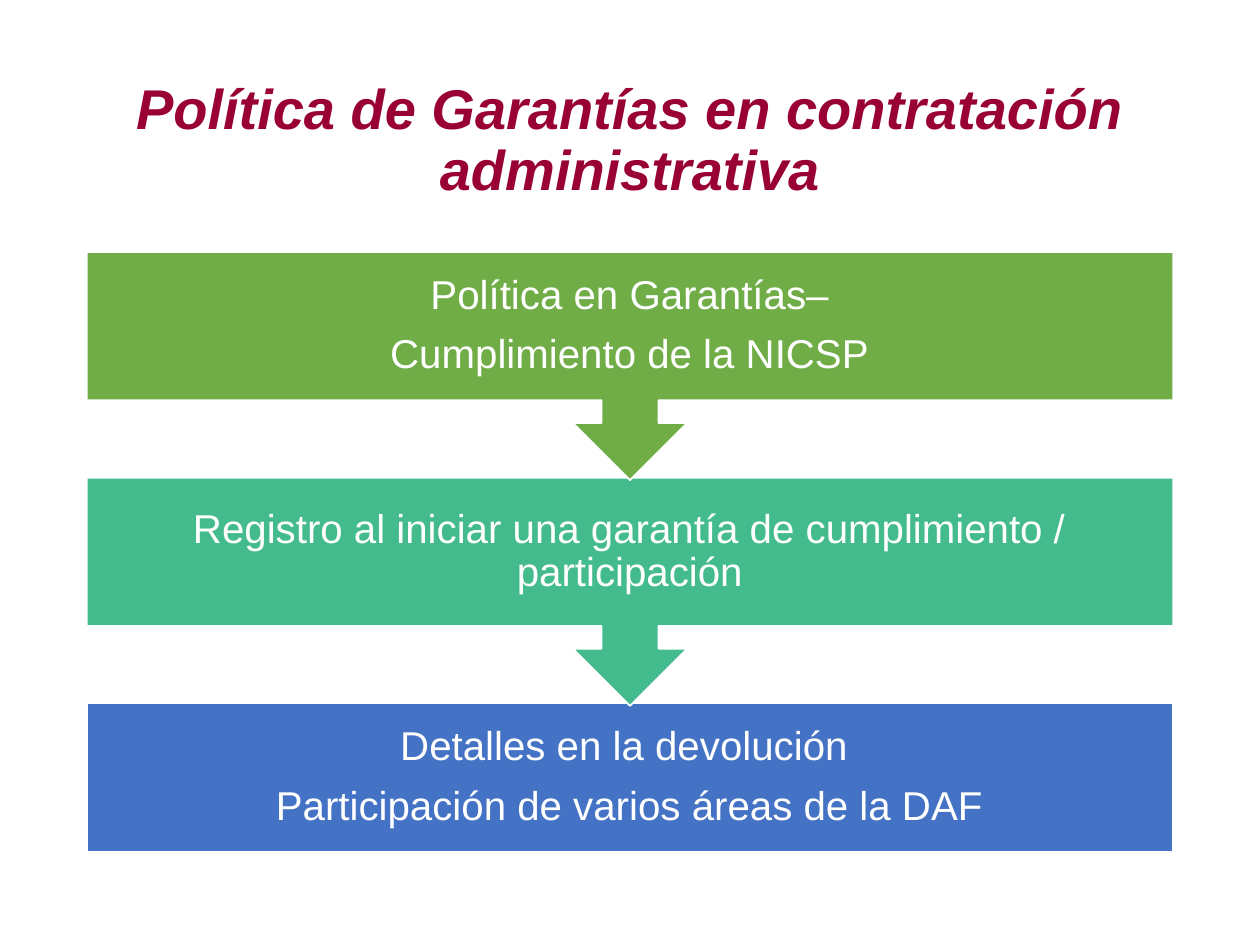
from pptx import Presentation
from pptx.dml.color import RGBColor
from pptx.enum.shapes import MSO_SHAPE
from pptx.enum.text import MSO_ANCHOR, PP_ALIGN
from pptx.util import Cm, Pt

TITLE = "Política de Garantías en contratación administrativa"
STEPS = [
    ("70AD47", ["Política en Garantías–", "Cumplimiento de la NICSP"]),
    ("43BB8D", ["Registro al iniciar una garantía de cumplimiento / participación"]),
    ("4472C4", ["Detalles en la devolución ", "Participación de varios áreas de la DAF"]),
]
LEFT, WIDTH = 1.75, 21.9
TOP, PITCH = 5.08, 4.55
CALL_H, BOX_H = 4.6, 2.99


def color(code):
    return RGBColor.from_string(code)


def write(frame, lines, size, code, inset, gap=0, strong=None):
    frame.word_wrap = True
    frame.vertical_anchor = MSO_ANCHOR.MIDDLE
    frame.margin_left = frame.margin_right = Cm(inset[0])
    frame.margin_top = frame.margin_bottom = Cm(inset[1])
    for i, line in enumerate(lines):
        para = frame.add_paragraph() if i else frame.paragraphs[0]
        para.text = line
        para.alignment = PP_ALIGN.CENTER
        para.line_spacing = 0.9
        para.space_after = Pt(gap)
        font = para.font
        font.name, font.size = "Arial", Pt(size)
        font.bold = font.italic = strong
        font.color.rgb = color(code)


def add_step(slide, i, code, lines):
    """Draw a step; every step but the last points down to the next."""
    last = i == len(STEPS) - 1
    kind = MSO_SHAPE.RECTANGLE if last else MSO_SHAPE.DOWN_ARROW_CALLOUT
    step = slide.shapes.add_shape(
        kind, Cm(LEFT), Cm(TOP + i * PITCH), Cm(WIDTH), Cm(BOX_H if last else CALL_H))
    step.shadow.inherit = False
    step.fill.solid()
    step.fill.fore_color.rgb = color(code)
    step.line.color.rgb = color("FFFFFF")
    step.line.width = Pt(1)
    write(step.text_frame, lines, 23, "FFFFFF", (0.46, 0.46), gap=9)


def main():
    deck = Presentation()
    deck.slide_width, deck.slide_height = Cm(25.4), Cm(19.05)
    slide = deck.slides.add_slide(deck.slide_layouts[6])
    title = slide.shapes.add_textbox(Cm(LEFT), Cm(1.02), Cm(WIDTH), Cm(3.68))
    write(title.text_frame, [TITLE], 32, "990033", (0.25, 0.13), strong=True)
    # The last step goes at the back, so each arrow tip lies over the next box
    for i, (code, lines) in reversed(list(enumerate(STEPS))):
        add_step(slide, i, code, lines)
    deck.save("out.pptx")


if __name__ == "__main__":
    main()
